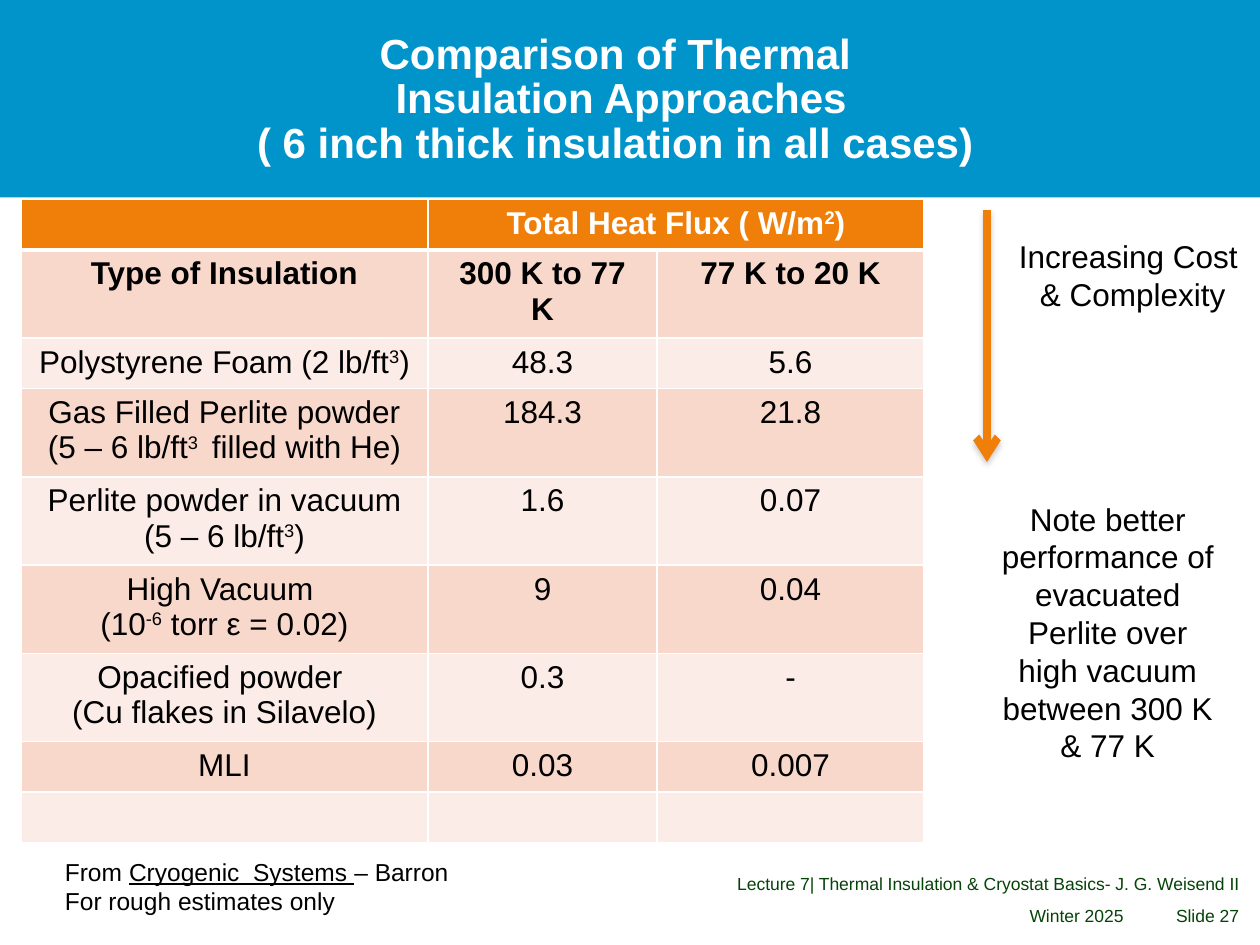
from lxml.etree import SubElement
from pptx import Presentation
from pptx.dml.color import RGBColor
from pptx.enum.shapes import MSO_CONNECTOR, MSO_SHAPE
from pptx.enum.text import MSO_ANCHOR, MSO_AUTO_SIZE, PP_ALIGN
from pptx.oxml.ns import qn
from pptx.util import Inches, Pt

ORANGE, PEACH, BLUSH = "F07F09", "F9D8CC", "FCECE7"
WHITE, BLACK, GREEN, BLUE = "FFFFFF", "000000", "064308", "0094CA"
SUPER, UNDER = ("baseline", "30000"), ("u", "sng")
GROW, NONE = MSO_AUTO_SIZE.SHAPE_TO_FIT_TEXT, MSO_AUTO_SIZE.NONE
CENTER, LEFT, RIGHT = PP_ALIGN.CENTER, PP_ALIGN.LEFT, PP_ALIGN.RIGHT


def color(text):
    return RGBColor.from_string(text)


def unit(num):
    return Inches(num / 12)


def apply(item, form):
    for key, val in form.items():
        setattr(item, key, val)


def node(top, tag, **attrs):
    return SubElement(top, qn("a:" + tag), attrs)


class Deck:
    font = "Arial"

    def __init__(self):
        self.prs = Presentation()
        apply(self.prs, dict(slide_width=unit(120), slide_height=unit(90)))
        self.slide = self.prs.slides.add_slide(self.prs.slide_layouts[6])
        self.shapes = self.slide.shapes

    def run(self, para, text, size, tint, bold):
        run = para.add_run()
        run.text = text
        apply(run.font, dict(name=self.font, size=Pt(size), bold=bold))
        run.font.color.rgb = color(tint)
        return run

    def lines(self, frame, lines, size, tint, bold=False, align=CENTER, lead=None, mark=SUPER):
        for num, line in enumerate(lines):
            para = frame.add_paragraph() if num else frame.paragraphs[0]
            apply(para, dict(alignment=align, line_spacing=lead))
            for odd, part in enumerate(line.split("^")):
                for row, text in enumerate(part.split("\n")):
                    if row:
                        para.add_line_break()
                    if text:
                        run = self.run(para, text, size, tint, bold)
                        if odd % 2:
                            run.font._element.set(*mark)

    def band(self, x, y, w, h, fill):
        box = self.shapes.add_shape(MSO_SHAPE.RECTANGLE, unit(x), unit(y), unit(w), unit(h))
        box.shadow.inherit = False
        box.fill.solid()
        box.fill.fore_color.rgb = color(fill)
        box.line.fill.background()

    def text(self, x, y, w, h, lines, size, tint, frame=None, **style):
        box = self.shapes.add_textbox(unit(x), unit(y), unit(w), unit(h)).text_frame
        apply(box, dict(word_wrap=True, auto_size=GROW) | (frame or {}))
        self.lines(box, lines, size, tint, **style)

    def title(self, x, y, w, h, line):
        pad = dict(margin_left=Inches(0.06), margin_right=Inches(0.06),
                   margin_top=Inches(0.02), margin_bottom=Inches(0.02))
        self.text(x, y, w, h, [line], 24, WHITE, pad, bold=True, lead=0.88)

    def foot(self, x, y, w, line):
        pad = dict(margin_left=0, margin_right=0, margin_top=0, margin_bottom=0,
                   vertical_anchor=MSO_ANCHOR.MIDDLE, auto_size=NONE)
        self.text(x, y, w, 2.6, [line], 10, GREEN, pad, align=RIGHT, lead=0.9)

    def cell(self, cell, text, row):
        tint = WHITE if row == 0 else BLACK
        fill = ORANGE if row == 0 else PEACH if row % 2 else BLUSH
        apply(cell, dict(margin_left=Inches(0.13), margin_right=Inches(0.13),
                         margin_top=Inches(0.05), margin_bottom=Inches(0.05)))
        props = cell._tc.get_or_add_tcPr()
        thick = {0: "lnB", 1: "lnT"}.get(row)
        for side in ("lnL", "lnR", "lnT", "lnB"):
            line = node(props, side, w=str(Pt(3 if side == thick else 1)))
            node(node(line, "solidFill"), "srgbClr", val=WHITE)
        cell.fill.solid()
        cell.fill.fore_color.rgb = color(fill)
        if text:
            self.lines(cell.text_frame, text.split("\n"), 18, tint, row < 2)

    def table(self, x, y, cols, rows, data):
        grid = self.shapes.add_table(len(rows), len(cols), unit(x), unit(y),
                                     unit(sum(cols)), unit(sum(rows))).table
        for col, wide in zip(grid.columns, cols):
            col.width = unit(wide)
        for row, high in zip(grid.rows, rows):
            row.height = unit(high)
        for r, line in enumerate(data):
            for c, text in enumerate(line):
                self.cell(grid.cell(r, c), text, r)
        grid.cell(0, 1).merge(grid.cell(0, 2))

    def arrow(self, x, y, end, low, tint):
        link = self.shapes.add_connector(MSO_CONNECTOR.STRAIGHT,
                                         unit(x), unit(y), unit(end), unit(low))
        link.line.width = Pt(4.5)
        link.line.color.rgb = color(tint)
        node(link.line._get_or_add_ln(), "tailEnd", type="arrow")
        glow = node(node(link._element.spPr, "effectLst"), "outerShdw", blurRad=str(Pt(3.1)),
                    dist=str(Pt(1.6)), dir="5400000", rotWithShape="0")
        node(node(glow, "srgbClr", val="808080"), "alpha", val="38000")


def main():
    deck = Deck()
    deck.band(0, 0, 120, 18.8, BLUE)
    deck.title(-0.4, 3, 118, 13.4, "Comparison of Thermal\n Insulation Approaches\n"
                                   "( 6 inch thick insulation in all cases)")
    data = [
        ("", "Total Heat Flux ( W/m^2^)", ""),
        ("Type of Insulation", "300 K to 77 K", "77 K to 20 K"),
        ("Polystyrene Foam (2 lb/ft^3^)", "48.3", "5.6"),
        ("Gas Filled Perlite powder\n(5 – 6 lb/ft^3 ^ filled with He)", "184.3", "21.8"),
        ("Perlite powder in vacuum\n(5 – 6 lb/ft^3^)", "1.6", "0.07"),
        ("High Vacuum \n(10^-6^ torr ε = 0.02)", "9", "0.04"),
        ("Opacified powder \n(Cu flakes in Silavelo)", "0.3", "-"),
        ("MLI", "0.03", "0.007"),
        ("", "", ""),
    ]
    low, high = 4.8, 8.4
    rows = [low, high, low] + [high] * 4 + [low] * 2
    deck.table(2, 19, [38.75, 21.85, 25.4], rows, data)
    deck.foot(50, 86, 57, "Winter 2025")
    deck.foot(50, 83, 68, "Lecture 7| Thermal Insulation & Cryostat Basics- J. G. Weisend II")
    deck.foot(108, 86, 10, "Slide 27")
    deck.arrow(94, 20, 94, 44, ORANGE)
    free = dict(word_wrap=False)
    deck.text(95.75, 22, 24.25, 8.5, ["Increasing Cost ", "& Complexity"], 18, BLACK, free)
    deck.text(5, 81, 39, 6.8, ["From ^Cryogenic  Systems ^– Barron", "For rough estimates only"],
              14, BLACK, free, align=LEFT, mark=UNDER)
    deck.text(94, 47, 23, 26.6, ["Note better performance of evacuated Perlite over "
                                 "high vacuum between 300 K & 77 K"], 18, BLACK)
    deck.prs.save("out.pptx")


if __name__ == "__main__":
    main()
